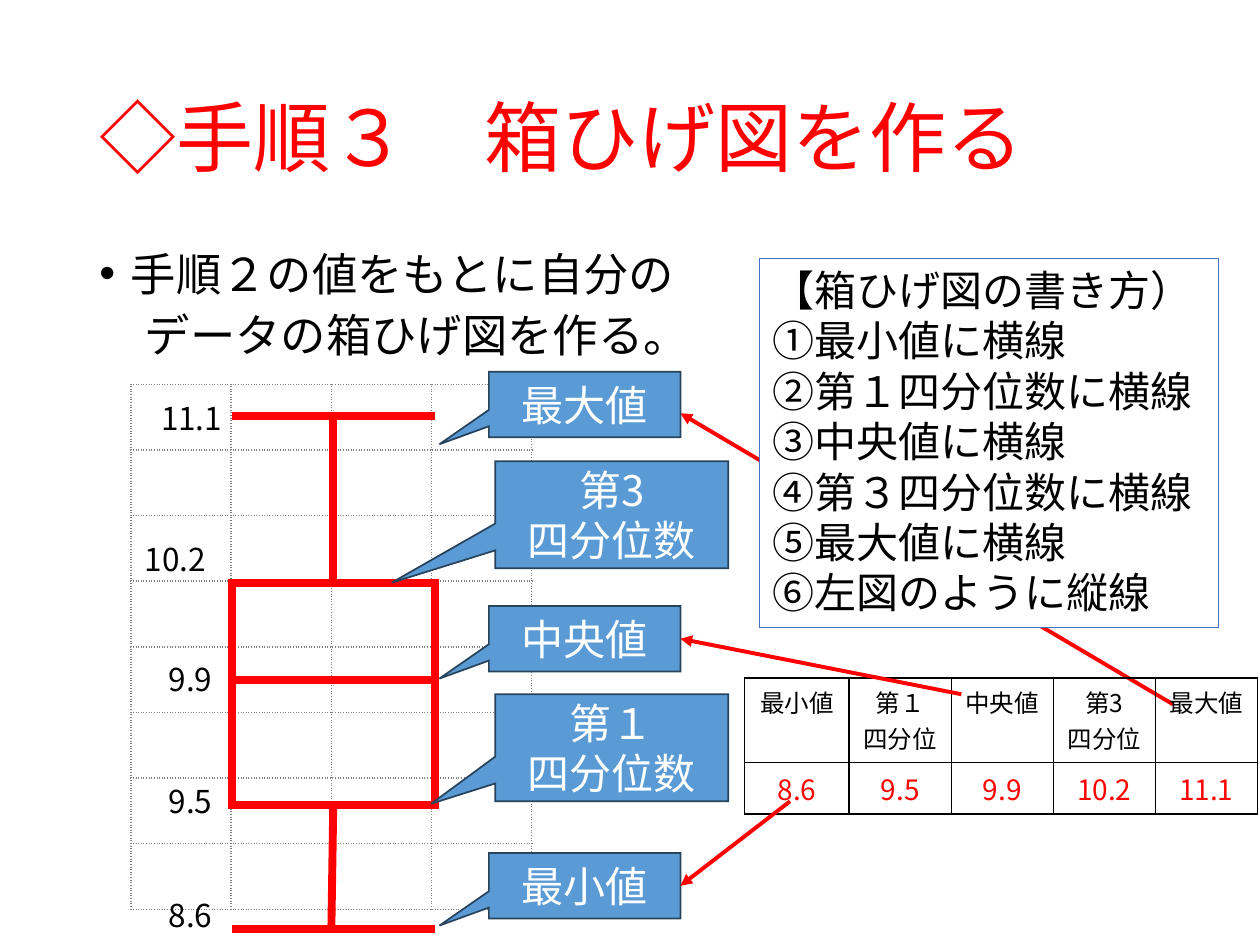
from lxml import etree
from pptx import Presentation
from pptx.dml.color import RGBColor
from pptx.enum.shapes import MSO_CONNECTOR, MSO_SHAPE
from pptx.enum.text import MSO_ANCHOR, PP_ALIGN
from pptx.oxml.ns import qn
from pptx.util import Inches, Pt

STRAIGHT = MSO_CONNECTOR.STRAIGHT
RECTANGLE, CALLOUT = MSO_SHAPE.RECTANGLE, MSO_SHAPE.RECTANGULAR_CALLOUT
TOP, MIDDLE = MSO_ANCHOR.TOP, MSO_ANCHOR.MIDDLE
LEFT, CENTER = PP_ALIGN.LEFT, PP_ALIGN.CENTER
TOP_SITE, BOTTOM_SITE, RIGHT_SITE = 0, 2, 3

THEME = {
    "font": "Noto Sans CJK JP",
    "red": "FF0000", "black": "000000", "white": "FFFFFF",
    "grid": "808080", "callout": "5B9BD5", "callout_line": "28445D", "note_line": "4472C4",
    "title": 44, "body": 25.9, "label": 24, "scale": 18, "value": 16, "header": 14,
    "plot_line": 4.5, "arrow": 2.25, "border": 1, "note_border": 0.75,
}

TITLE = ["◇手順３　箱ひげ図を作る"]
BODY = ["手順２の値をもとに自分の", "　データの箱ひげ図を作る。"]
NOTE = ["【箱ひげ図の書き方）", "①最小値に横線", "②第１四分位数に横線", "③中央値に横線",
        "④第３四分位数に横線", "⑤最大値に横線", "⑥左図のように縦線"]
SUMMARY = [
    (["最小値"], "8.6"),
    (["第１", "四分位"], "9.5"),
    (["中央値"], "9.9"),
    (["第3", "四分位"], "10.2"),
    (["最大値"], "11.1"),
]
SCALE = [
    ("8.6", 1.24, 7.06, 0.76),
    ("9.5", 1.24, 6.16, 0.76),
    ("9.9", 1.24, 5.19, 0.76),
    ("10.2", 1.05, 4.24, 0.89),
    ("11.1", 1.18, 3.12, 0.89),
]
SMALL, LARGE = (3.88, 1.52, 0.52), (3.93, 1.85, 0.85)
CALLOUTS = [
    (["最大値"], 2.95, SMALL, (-0.758, 0.607)),
    (["最小値"], 6.77, SMALL, (-0.758, 0.607)),
    (["中央値"], 4.81, SMALL, (-0.758, 0.607)),
    (["第3", "四分位数"], 3.66, LARGE, (-0.944, 0.635)),
    (["第１", "四分位数"], 5.51, LARGE, (-0.774, 0.522)),
]
BOX_LEFT, BOX_TOP, BOX_WIDTH, BOX_HEIGHT = 1.84, 4.63, 1.61, 1.76
MAX_Y, MEDIAN_Y, MIN_Y = 3.3, 5.4, 7.37
CENTER_X = BOX_LEFT + BOX_WIDTH / 2

prs = Presentation()
prs.slide_width, prs.slide_height = Inches(10), Inches(7.5)
slide = prs.slides.add_slide(prs.slide_layouts[6])


def color(name):
    return RGBColor.from_string(THEME[name])


def add_bullet(paragraph):
    properties = paragraph._p.get_or_add_pPr()
    properties.set("marL", str(Inches(0.25)))
    properties.set("indent", str(Inches(-0.25)))
    etree.SubElement(properties, qn("a:buFont"), typeface="Arial")
    etree.SubElement(properties, qn("a:buChar"), char="•")


def write(frame, lines, size, ink, align=LEFT, spacing=1.0, gap=0, bullet=False):
    for index, line in enumerate(lines):
        paragraph = frame.paragraphs[0] if index == 0 else frame.add_paragraph()
        if bullet and index == 0:
            add_bullet(paragraph)
        layout = {"alignment": align, "line_spacing": spacing, "space_before": Pt(gap if index else 0)}
        for key, value in layout.items():
            setattr(paragraph, key, value)
        run = paragraph.add_run()
        run.text = line
        for key, value in {"name": THEME["font"], "size": Pt(THEME[size])}.items():
            setattr(run.font, key, value)
        run.font.color.rgb = color(ink)
        etree.SubElement(run._r.get_or_add_rPr(), qn("a:ea"), typeface=THEME["font"])


def add_text(lines, place, size, ink, anchor=TOP, **layout):
    frame = slide.shapes.add_textbox(*map(Inches, place)).text_frame
    frame.word_wrap = True
    frame.vertical_anchor = anchor
    write(frame, lines, size, ink, **layout)


def add_panel(kind, place, fill, line, width):
    panel = slide.shapes.add_shape(kind, *map(Inches, place))
    panel.shadow.inherit = False
    if fill:
        panel.fill.solid()
        panel.fill.fore_color.rgb = color(fill)
    else:
        panel.fill.background()
    panel.line.color.rgb = color(line)
    panel.line.width = Pt(THEME[width])
    etree.SubElement(panel.line._get_or_add_ln(), qn("a:miter"), lim="800000")
    panel.text_frame.word_wrap = True
    return panel


def add_line(start, end, width="plot_line", arrow=False):
    line = slide.shapes.add_connector(STRAIGHT, *map(Inches, start + end))
    line.line.color.rgb = color("red")
    line.line.width = Pt(THEME[width])
    if arrow:
        etree.SubElement(line.line._get_or_add_ln(), qn("a:tailEnd"), type="triangle")
    etree.SubElement(line._element.spPr, qn("a:effectLst"))
    return line


def add_table(place, widths, heights, ink, dash):
    table = slide.shapes.add_table(len(heights), len(widths), *map(Inches, place)).table
    table.first_row = table.horz_banding = False
    for column, width in zip(table.columns, widths):
        column.width = Inches(width)
    for row, height in zip(table.rows, heights):
        row.height = Inches(height)
    for cell in table.iter_cells():
        cell.fill.background()
        properties = cell._tc.get_or_add_tcPr()
        for index, side in enumerate(("lnL", "lnR", "lnT", "lnB")):
            border = etree.Element(qn(f"a:{side}"), w=str(Pt(THEME["border"])))
            fill = etree.SubElement(border, qn("a:solidFill"))
            etree.SubElement(fill, qn("a:srgbClr"), val=THEME[ink])
            etree.SubElement(border, qn("a:prstDash"), val=dash)
            properties.insert(index, border)
    return table


add_line((9.31, 5.59), (5.4, 3.28), "arrow", arrow=True)
add_text(TITLE, (0.69, 0.4, 9.12, 1.45), "title", "red", MIDDLE, spacing=0.9)
add_text(BODY, (0.69, 1.99, 8.62, 0.96), "body", "black", spacing=0.8, gap=10, bullet=True)

add_table((1.04, 3.05, 3.18, 4.17), [3.18 / 4] * 4, [4.17 / 8] * 8, "grid", "sysDot")
quartile_box = add_panel(RECTANGLE, (BOX_LEFT, BOX_TOP, BOX_WIDTH, BOX_HEIGHT),
                         None, "red", "plot_line")
for y in (MAX_Y, MIN_Y, MEDIAN_Y):
    add_line((BOX_LEFT, y), (BOX_LEFT + BOX_WIDTH, y))
upper_whisker = add_line((CENTER_X, MAX_Y), (CENTER_X, BOX_TOP))
upper_whisker.end_connect(quartile_box, TOP_SITE)

callouts = {}
for lines, top, (left, width, height), tip in CALLOUTS:
    callout = add_panel(CALLOUT, (left, top, width, height), "callout", "callout_line", "border")
    callout.adjustments[0], callout.adjustments[1] = tip
    callout.text_frame.vertical_anchor = MIDDLE
    write(callout.text_frame, lines, "label", "white", CENTER)
    callouts[lines[0]] = callout

summary = add_table((5.91, 5.38, 4.07, 1.08), [0.83] + [0.81] * 4, [0.67, 0.41], "black", "solid")
for column, (heading, value) in enumerate(SUMMARY):
    write(summary.cell(0, column).text_frame, heading, "header", "black", CENTER)
    value_cell = summary.cell(1, column)
    value_cell.vertical_anchor = MIDDLE
    write(value_cell.text_frame, [value], "value", "red", CENTER)

for value, left, top, width in SCALE:
    add_text([value], (left, top, width, 0.4), "scale", "black")

note = add_panel(RECTANGLE, (6.03, 2.05, 3.64, 2.93), "white", "note_line", "note_border")
note.text_frame.vertical_anchor = TOP
write(note.text_frame, NOTE, "label", "black")

for name, start, end in (("中央値", (7.63, 5.51), (5.4, 5.07)), ("最小値", (6.27, 6.36), (5.4, 7.03))):
    add_line(start, end, "arrow", arrow=True).end_connect(callouts[name], RIGHT_SITE)
lower_whisker = add_line((CENTER_X, BOX_TOP + BOX_HEIGHT), (2.63, MIN_Y))
lower_whisker.begin_connect(quartile_box, BOTTOM_SITE)

prs.save("out.pptx")
